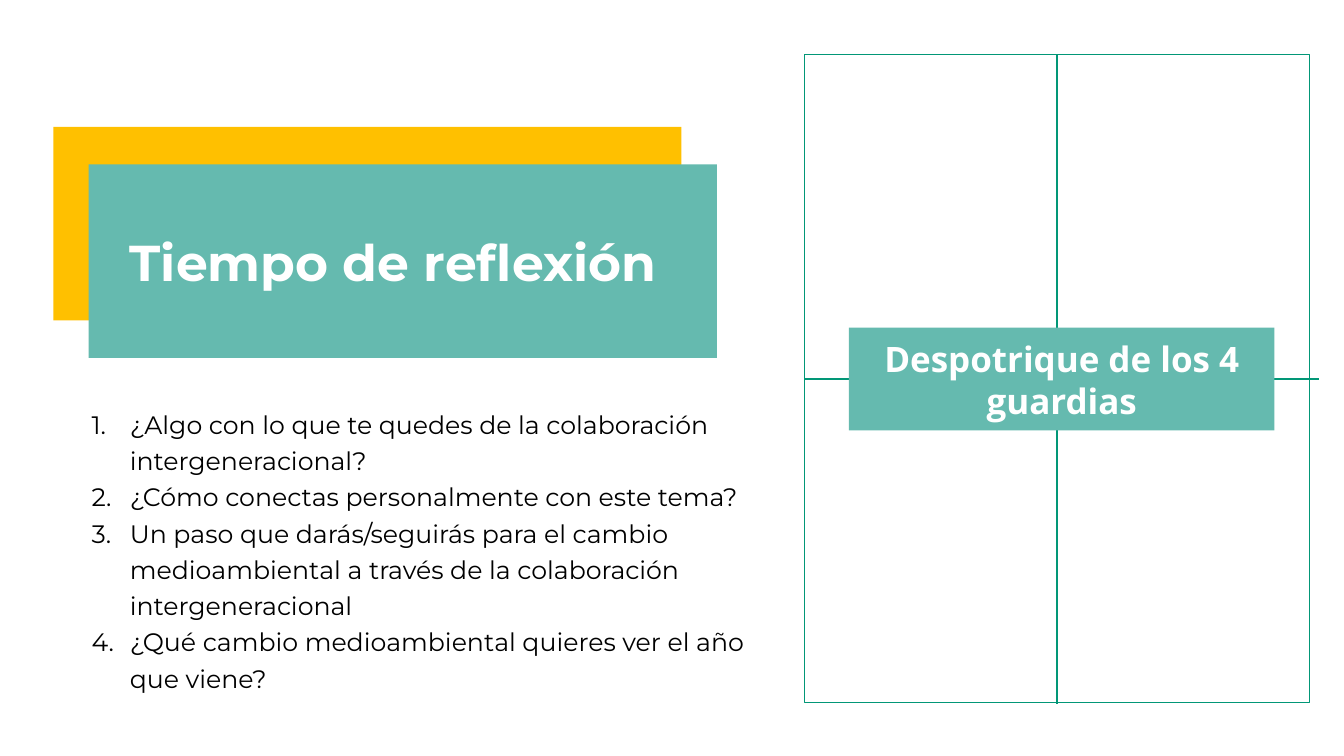
from lxml.etree import SubElement
from pptx import Presentation
from pptx.dml.color import RGBColor
from pptx.enum.shapes import MSO_CONNECTOR, MSO_SHAPE
from pptx.enum.text import MSO_ANCHOR, PP_ALIGN
from pptx.oxml.ns import qn
from pptx.util import Inches, Pt

TEAL, GREEN, AMBER = "65BAAF", "029777", "FFC000"
WHITE, BLACK = "FFFFFF", "000000"
QUESTIONS = [
    "¿Algo con lo que te quedes de la colaboración intergeneracional?",
    "¿Cómo conectas personalmente con este tema?",
    "Un paso que darás/seguirás para el cambio medioambiental "
    "a través de la colaboración intergeneracional",
    "¿Qué cambio medioambiental quieres ver el año que viene?",
]


def color(hex_code):
    """Turn a hex string into a colour."""
    return RGBColor.from_string(hex_code)


def style_font(paragraph, name, size, hex_code, bold=False):
    """Set the font of a whole paragraph."""
    font = paragraph.font
    font.name, font.size, font.bold = name, Pt(size), bold
    font.color.rgb = color(hex_code)


def add_panel(slide, left, top, width, height, fill, outline=None):
    """Add a filled rectangle, outlined only on request."""
    panel = slide.shapes.add_shape(
        MSO_SHAPE.RECTANGLE, Inches(left), Inches(top), Inches(width), Inches(height))
    panel.shadow.inherit = False
    panel.fill.solid()
    panel.fill.fore_color.rgb = color(fill)
    if outline:
        panel.line.color.rgb = color(outline)
        panel.line.width = Pt(1)
    else:
        panel.line.fill.background()
    return panel


def add_divider(slide, x1, y1, x2, y2):
    """Add a straight line that divides the quadrants."""
    divider = slide.shapes.add_connector(
        MSO_CONNECTOR.STRAIGHT, Inches(x1), Inches(y1), Inches(x2), Inches(y2))
    divider.line.color.rgb = color(GREEN)
    divider.line.width = Pt(1.5)
    SubElement(divider._element.spPr, qn("a:effectLst"))


def add_text_frame(slide, left, top, width, height):
    """Add a wrapping text box and return its frame."""
    box = slide.shapes.add_textbox(
        Inches(left), Inches(top), Inches(width), Inches(height))
    box.text_frame.word_wrap = True
    return box.text_frame


def number_paragraph(paragraph):
    """Give a paragraph a hanging automatic number."""
    properties = paragraph._p.get_or_add_pPr()
    properties.set("marL", str(Inches(0.5)))
    properties.set("indent", str(Inches(-0.38)))
    bullet_color = SubElement(properties, qn("a:buClr"))
    SubElement(bullet_color, qn("a:srgbClr"), val=BLACK)
    SubElement(properties, qn("a:buFont"), typeface="Montserrat")
    SubElement(properties, qn("a:buAutoNum"), type="arabicPeriod")


def add_title(slide):
    """Add the title on its two offset panels."""
    add_panel(slide, 0.53, 1.26, 6.23, 1.92, AMBER)
    add_panel(slide, 0.88, 1.63, 6.23, 1.92, TEAL)
    title = add_text_frame(slide, 1.19, 2.24, 5.54, 0.71)
    title.vertical_anchor = MSO_ANCHOR.MIDDLE
    title.text = "Tiempo de reflexión"
    style_font(title.paragraphs[0], "Montserrat", 36, WHITE, bold=True)


def add_questions(slide):
    """Add the numbered reflection questions."""
    questions = add_text_frame(slide, 0.69, 3.95, 6.94, 2.62)
    questions.text = "\n".join(QUESTIONS)
    for question in questions.paragraphs:
        question.line_spacing = 1.2
        number_paragraph(question)
        style_font(question, "Montserrat", 18, BLACK)


def add_quadrants(slide):
    """Add the four-square board with its central label."""
    add_panel(slide, 7.98, 0.54, 5.01, 6.43, WHITE, outline=GREEN)
    add_divider(slide, 10.48, 0.54, 10.48, 6.98)
    add_divider(slide, 7.98, 3.76, 13.08, 3.76)
    label = add_panel(slide, 8.42, 3.25, 4.22, 1.02, TEAL).text_frame
    label.word_wrap = True
    label.vertical_anchor = MSO_ANCHOR.MIDDLE
    label.text = "Despotrique de los 4 guardias"
    label.paragraphs[0].alignment = PP_ALIGN.CENTER
    style_font(label.paragraphs[0], "Open Sans", 25, WHITE, bold=True)


def main():
    """Build and save the slide."""
    presentation = Presentation()
    presentation.slide_width = Inches(13.33)
    presentation.slide_height = Inches(7.5)
    slide = presentation.slides.add_slide(presentation.slide_layouts[6])
    add_title(slide)
    add_questions(slide)
    add_quadrants(slide)
    presentation.save("out.pptx")


if __name__ == "__main__":
    main()
